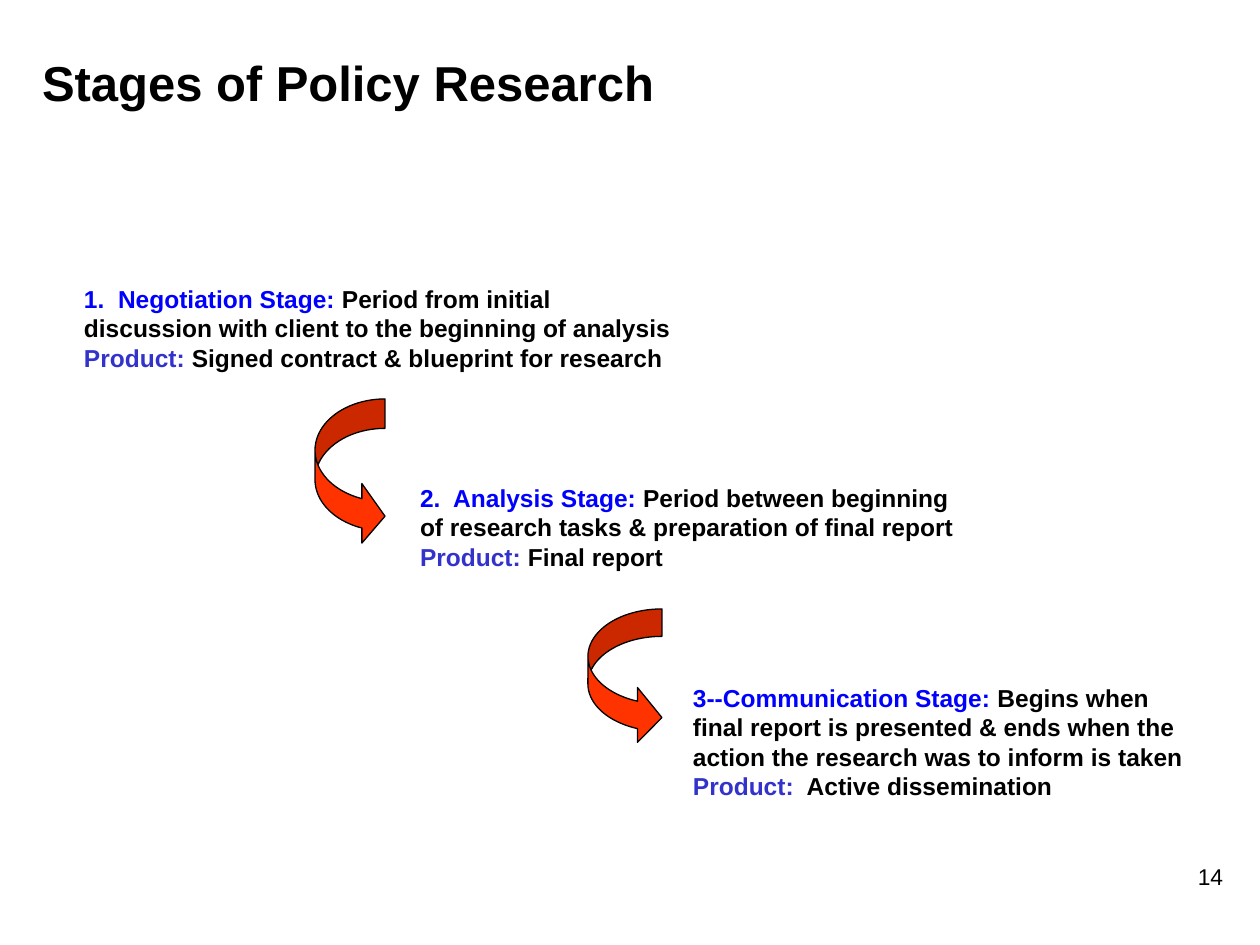
from pptx import Presentation
from pptx.dml.color import RGBColor
from pptx.enum.shapes import MSO_SHAPE
from pptx.enum.text import MSO_ANCHOR, MSO_AUTO_SIZE, PP_ALIGN
from pptx.util import Emu, Pt

PX_PER_INCH = 126
TITLE_ONLY = 5
CURVED_ARROW = MSO_SHAPE.CURVED_RIGHT_ARROW
TOP = MSO_ANCHOR.TOP
FIT_SHAPE = MSO_AUTO_SIZE.SHAPE_TO_FIT_TEXT
LEFT, RIGHT = PP_ALIGN.LEFT, PP_ALIGN.RIGHT

FONT = "Arial"
BLACK, BLUE, INDIGO, RED = "000000", "0000FF", "3333CC", "FF3300"

# Box, stage name, description, product label, product
STAGES = [
    ((84, 284, 599, 88), "1.  Negotiation Stage: ",
     "Period from initial discussion with client to the beginning of analysis",
     "Product: ", "Signed contract & blueprint for research"),
    ((420, 483, 536, 88), "2.  Analysis Stage: ",
     "Period between beginning of research tasks & preparation of final report",
     "Product: ", "Final report"),
    ((693, 683, 494, 117), "3--Communication Stage: ",
     "Begins when final report is presented & ends when the action "
     "the research was to inform is taken",
     "Product:", "  Active dissemination"),
]
# Box, adjustments
ARROWS = [
    ((315, 399, 70, 147), (0.42, 0.85, 0.33)),
    ((588, 609, 74, 136), (0.37, 0.74, 0.33)),
]


def px(n):
    return Emu(round(n * 914400 / PX_PER_INCH))


def rgb(code):
    return RGBColor.from_string(code)


def place(sp, box):
    sp.left, sp.top, sp.width, sp.height = map(px, box)


def set_frame(tf, margin_x=0, margin_y=0):
    tf.word_wrap = True
    tf.vertical_anchor = TOP
    tf.margin_left = tf.margin_right = px(margin_x)
    tf.margin_top = tf.margin_bottom = px(margin_y)


def format_run(r, size, color, bold=True):
    r.font.name = FONT
    r.font.size = Pt(size)
    r.font.bold = bold
    r.font.color.rgb = rgb(color)


def add_title(slide, text):
    sp = slide.shapes.title
    place(sp, (42, 53, 788, 59))
    tf = sp.text_frame
    tf.text = text
    set_frame(tf)
    tf.auto_size = FIT_SHAPE
    p = tf.paragraphs[0]
    p.alignment = LEFT
    format_run(p.runs[0], 28, BLACK)


def add_label_line(p, label, label_color, text):
    """Fill a paragraph with a coloured label followed by black text."""
    for content, color in ((label, label_color), (text, BLACK)):
        r = p.add_run()
        r.text = content
        format_run(r, 14, color)


def add_stage(slide, box, name, description, product_label, product):
    tf = slide.shapes.add_textbox(*map(px, box)).text_frame
    set_frame(tf)
    tf.auto_size = FIT_SHAPE
    add_label_line(tf.paragraphs[0], name, BLUE, description)
    add_label_line(tf.add_paragraph(), product_label, INDIGO, product)


def add_arrow(slide, box, adjustments):
    sp = slide.shapes.add_shape(CURVED_ARROW, *map(px, box))
    for i, value in enumerate(adjustments):
        sp.adjustments[i] = value
    sp.shadow.inherit = False
    sp.fill.solid()
    sp.fill.fore_color.rgb = rgb(RED)
    sp.line.color.rgb = rgb(BLACK)
    sp.line.width = Pt(0.75)


def add_page_number(slide, number):
    tf = slide.shapes.add_textbox(*map(px, (974, 857, 262, 63))).text_frame
    tf.text = number
    set_frame(tf, 13, 6)
    p = tf.paragraphs[0]
    p.alignment = RIGHT
    format_run(p.runs[0], 13, BLACK, bold=False)


def main():
    prs = Presentation()
    prs.slide_width, prs.slide_height = px(1260), px(945)
    slide = prs.slides.add_slide(prs.slide_layouts[TITLE_ONLY])
    add_page_number(slide, "14")
    add_title(slide, "Stages of Policy Research")
    for stage in STAGES:
        add_stage(slide, *stage)
    for arrow in ARROWS:
        add_arrow(slide, *arrow)
    prs.save("out.pptx")


if __name__ == "__main__":
    main()
